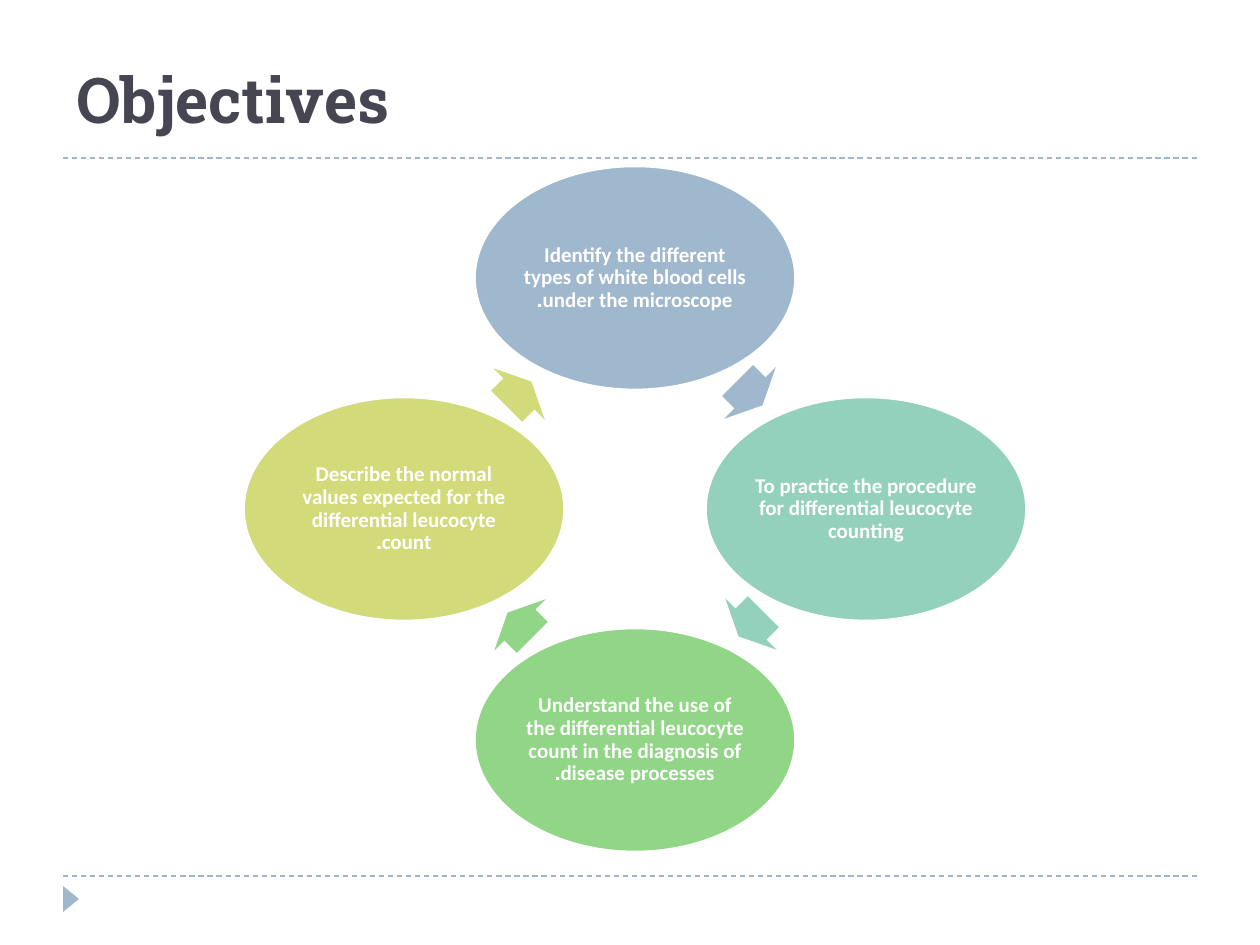
"""Build the Objectives slide: four goals arranged in a cycle."""
import pptx
import pptx.dml.color
import pptx.enum.dml
import pptx.enum.shapes
import pptx.enum.text
import pptx.oxml
import pptx.util

PX = 914400 / 126
MSO = pptx.enum.shapes.MSO_SHAPE
ANCHOR = pptx.enum.text.MSO_ANCHOR
ALIGN = pptx.enum.text.PP_ALIGN


def rgb(value):
    return pptx.dml.color.RGBColor.from_string(value)


def add_shape(kind, cx, cy, w, h, color, rotation=0):
    box = [round(v * PX) for v in (cx - w / 2, cy - h / 2, w, h)]
    sp = s.shapes.add_shape(kind, *box)
    sp.shadow.inherit = False
    sp.rotation = rotation
    sp.fill.solid()
    sp.fill.fore_color.rgb = rgb(color)
    sp.line.fill.background()
    return sp


prs = pptx.Presentation()
prs.slide_width, prs.slide_height = round(1260 * PX), round(945 * PX)
s = prs.slides.add_slide(prs.slide_layouts[6])

for y in (876, 158):
    x1, y1, x2, y2 = [round(v * PX) for v in (63, y, 1197, y)]
    line = s.shapes.add_connector(pptx.enum.shapes.MSO_CONNECTOR.STRAIGHT, x1, y1, x2, y2)
    line.line.color.rgb = rgb("9FB8CD")
    line.line.width = pptx.util.Pt(0.75)
    line.line.dash_style = pptx.enum.dml.MSO_LINE.DASH
    line._element.spPr.append(pptx.oxml.parse_xml(
        '<a:effectLst xmlns:a="http://schemas.openxmlformats.org/drawingml/2006/main"/>'))

add_shape(MSO.ISOSCELES_TRIANGLE, 71, 899, 26, 16, "9FB8CD", 90)

goals = [
    ("Identify the different types of white blood cells under the microscope.", "9FB8CD"),
    ("To practice the procedure for differential leucocyte counting", "93D1BC"),
    ("Understand the use of the differential leucocyte count in the diagnosis of disease processes.",
     "91D587"),
    ("Describe the normal values expected for the differential leucocyte count.", "D2DA7A"),
]
title_font = {"name": "Roboto Slab", "size": pptx.util.Pt(36), "bold": True}
goal_font = {"name": "Calibri", "size": pptx.util.Pt(12), "bold": True}
texts = [("Objectives", (64, 16, 1134, 126), title_font, "464653")]

cx, cy = 635, 509
dx, dy = 0, -231
ax, ay = 115, -116
for i, (text, color) in enumerate(goals):
    x, y = cx + dx, cy + dy
    sp = add_shape(MSO.OVAL, x, y, 321, 224, color)
    sp.line.color.rgb = rgb("FFFFFF")
    sp.line.width = pptx.util.Pt(1.5)
    arrow = add_shape(MSO.RIGHT_ARROW, cx + ax, cy + ay, 35, 73, color, 45 + 90 * i)
    arrow.adjustments[0] = 0.6
    texts.append((text, (x - 114, y - 79, 228, 158), goal_font, "FFFFFF"))
    dx, dy = -dy, dx
    ax, ay = -ay, ax

for text, box, font, color in texts:
    tf = s.shapes.add_textbox(*[round(v * PX) for v in box]).text_frame
    tf.word_wrap = True
    tf.vertical_anchor = ANCHOR.BOTTOM
    p = tf.paragraphs[0]
    if font is goal_font:
        tf.vertical_anchor = ANCHOR.MIDDLE
        for side in ("left", "top", "right", "bottom"):
            setattr(tf, f"margin_{side}", pptx.util.Inches(0.02))
        p.alignment = ALIGN.CENTER
        p.line_spacing = 0.9
        p._p.get_or_add_pPr().set("rtl", "1")
    r = p.add_run()
    r.text = text
    r.font.color.rgb = rgb(color)
    for name, value in font.items():
        setattr(r.font, name, value)

prs.save("out.pptx")
